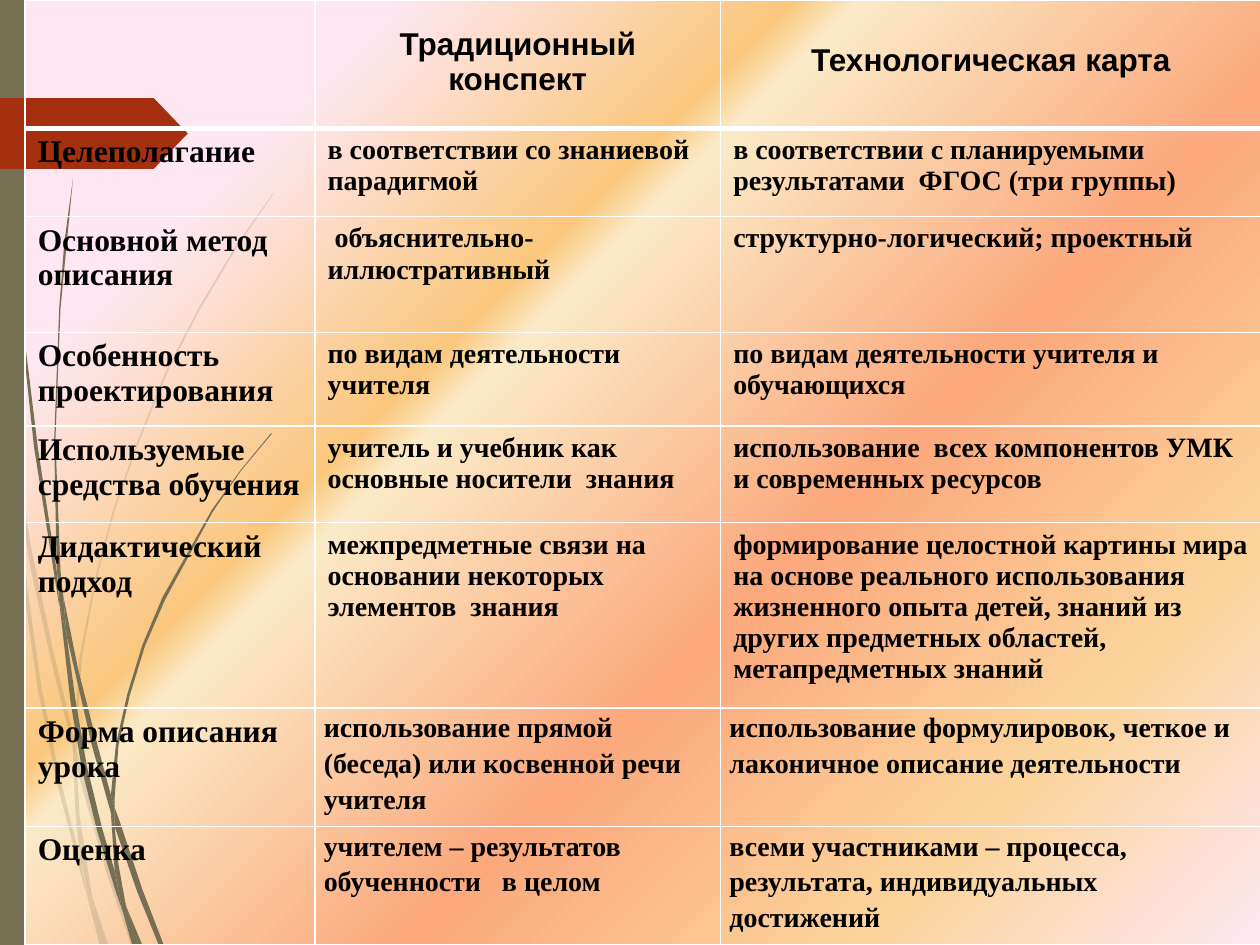
"""Build a slide that compares a traditional lesson plan with a technological map."""
from dataclasses import dataclass

from lxml import etree
from pptx import Presentation
from pptx.dml.color import RGBColor
from pptx.enum.shapes import MSO_SHAPE
from pptx.enum.text import MSO_ANCHOR, PP_ALIGN
from pptx.oxml.ns import qn
from pptx.util import Emu, Inches, Pt

RECTANGLE, ARROW_TAG = MSO_SHAPE.RECTANGLE, MSO_SHAPE.PENTAGON
LEFT, CENTER, TOP = PP_ALIGN.LEFT, PP_ALIGN.CENTER, MSO_ANCHOR.TOP
COLORS = {"stem": "766F54", "tag": "A53010", "text": "000000", "border": "FFFFFF",
          "pink": "FEE7F2", "amber": "FAC77D", "cream": "FBEAC7",
          "coral": "FBA97D", "sand": "FBD49C"}
BACKGROUND = [(18, "pink"), (36, "amber"), (39, "cream"),
              (61, "coral"), (82, "sand"), (100, "pink")]
GRID_COLUMNS, GRID_ROWS = 100, 75
SLIDE_WIDTH, SLIDE_HEIGHT = Inches(10), Inches(7.5)
TABLE_COLUMNS = [23, 32.2, 42.9]
TABLE_ROWS = [10.2, 7, 9.2, 7.4, 7.7, 14.7, 9.4, 9.4]
HEADERS = [("", 0.5), ("Традиционный конспект", 2.1), ("Технологическая карта", 3.4)]


@dataclass(frozen=True)
class Box:
    left: float
    top: float
    width: float
    height: float


@dataclass(frozen=True)
class Stem:
    points: list[tuple[float, float]]
    opacity: int = 100


@dataclass(frozen=True)
class Aspect:
    name: str
    traditional: str
    technological: str
    loose: bool = False


ASPECTS = [
    Aspect("Целеполагание", "в соответствии со знаниевой парадигмой",
           "в соответствии с планируемыми результатами  ФГОС (три группы)"),
    Aspect("Основной метод описания", " объяснительно- иллюстративный",
           "структурно-логический; проектный"),
    Aspect("Особенность проектирования", "по видам деятельности учителя",
           "по видам деятельности учителя и обучающихся"),
    Aspect("Используемые средства обучения",
           "учитель и учебник как основные носители  знания",
           "использование  всех компонентов УМК и современных ресурсов"),
    Aspect("Дидактический подход",
           "межпредметные связи на основании некоторых элементов  знания",
           "формирование целостной картины мира на основе реального использования "
           "жизненного опыта детей, знаний из других предметных областей, "
           "метапредметных знаний"),
    Aspect("Форма описания урока",
           "использование прямой (беседа) или косвенной речи учителя",
           "использование формулировок, четкое и лаконичное описание деятельности", True),
    Aspect("Оценка", "учителем – результатов обученности   в целом",
           "всеми участниками – процесса, результата, индивидуальных достижений", True),
]

PALE_OUTLINES = [
    [(0.8, 35), (0.6, 32.2), (0, 28.2), (0, 29.9), (0.7, 34.4)],
    [(4, 52.2), (5.9, 59.9), (5.9, 58.6), (4.3, 52), (2.5, 43.6), (1, 34.5),
     (1.2, 37.6), (2.4, 45)],
    [(6.4, 60.7), (6.1, 59.6), (6.1, 61), (8.5, 69.4), (10.4, 75), (10.8, 75), (8.8, 69.2)],
    [(8.3, 75), (8.6, 75), (7.3, 71.1)],
    [(6.4, 68.3), (4.8, 61.9), (3.3, 54.6), (2.2, 46.9), (1.2, 37.6), (0.8, 35),
     (1.9, 47), (3, 54.7), (4.5, 62.1), (6.4, 69.3), (7, 71.4)],
    [(5.8, 59.9), (6, 64.6), (6.4, 68.3), (7.3, 71.1), (6.3, 64.6), (6.1, 60.8)],
    [(6.1, 58.4), (6.5, 52.2), (7.6, 46.2), (9.1, 40.5), (11.1, 34.9), (13.3, 29.5),
     (15.9, 24.5), (18.7, 19.8), (21.7, 15.4), (21.7, 15.3), (18.6, 19.7), (15.8, 24.4),
     (13.2, 29.4), (11, 34.8), (9, 40.4), (7.5, 46.1), (6.3, 52.2), (5.9, 58.4), (6.1, 59.6)],
    [(7, 71.4), (7.9, 75), (8.2, 75)],
    [(6.1, 61), (6.1, 59.6), (5.9, 58.6), (5.8, 59.9)],
    [(6.7, 69.2), (6.5, 68.3), (7, 71.4), (8.2, 75), (8.3, 75), (7.3, 71.1)],
]
DARK_OUTLINES = [
    [(0.5, 11), (1.4, 23.3), (2.7, 35.5), (4.7, 48.1), (4.5, 45.3), (3, 35.5),
     (1.5, 23.2), (0.6, 10.9), (0.3, 0), (0.2, 0)],
    [(7.3, 59.2), (8.8, 64.5), (8.8, 63.1), (7.7, 59), (6.2, 53.1), (5, 47.2), (5.3, 50.5)],
    [(9.4, 64.9), (9.1, 64.1), (9.1, 65.6), (10.9, 70.8), (12.6, 75), (13, 75), (11.3, 70.6)],
    [(9.1, 69.1), (8.1, 65.7), (6.9, 60.8), (6, 55.6), (5.3, 50.5), (4.7, 47.7),
     (5.6, 55.7), (6.5, 61), (7.7, 65.9), (9.2, 70.8), (9.7, 72.2)],
    [(5, 47.2), (4.8, 45.3), (4.4, 34.9), (4.8, 24.5), (5.8, 14.1), (5.1, 19.3),
     (4.7, 24.5), (4.3, 34.9), (4.5, 44.9), (4.9, 47.2)],
    [(11, 75), (11.3, 75), (10, 71.9)],
    [(4.7, 47.7), (5.3, 50.5), (5, 47.2), (4.5, 44.9)],
    [(9.1, 63.3), (9.4, 59.2), (10.3, 55.2), (11.5, 51.3), (13.1, 47.6), (16.9, 40.6),
     (19.1, 37.4), (21.6, 34.4), (21.5, 34.4), (19.1, 37.3), (16.8, 40.5), (12.9, 47.4),
     (11.3, 51.2), (10.1, 55.1), (9.2, 59.1), (8.8, 63.1), (9.1, 64.1)],
    [(9.7, 72.2), (10.5, 75), (10.8, 75)],
    [(8.8, 64.5), (9.1, 69.1), (10, 71.9), (9.4, 68.6), (9.1, 65.6)],
    [(8.8, 64.5), (9.1, 65.6), (9.1, 64.1), (8.8, 63.1)],
    [(9.6, 70.6), (9.1, 69.1), (9.7, 72.2), (10.8, 75), (11, 75), (10, 71.9)],
]
STEMS = [Stem(points, 20) for points in PALE_OUTLINES] + [Stem(points) for points in DARK_OUTLINES]


def across(columns: float) -> Emu:
    return Emu(round(SLIDE_WIDTH * columns / GRID_COLUMNS))


def down(rows: float) -> Emu:
    return Emu(round(SLIDE_HEIGHT * rows / GRID_ROWS))


def add_color(parent, color: str):
    return etree.SubElement(parent, qn("a:srgbClr"), val=COLORS[color])


def paint_background(slide) -> None:
    fill = slide.background.fill
    fill.gradient()
    fill.gradient_angle = 315
    stops = slide.element.find(".//" + qn("a:gsLst"))
    for stop in list(stops):
        stops.remove(stop)
    for position, color in BACKGROUND:
        add_color(etree.SubElement(stops, qn("a:gs"), pos=str(position * 1000)), color)


def paint_shape(shape, color: str, opacity: int = 100) -> None:
    shape.shadow.inherit = False
    shape.fill.solid()
    shape.fill.fore_color.rgb = RGBColor.from_string(COLORS[color])
    shape.line.fill.background()
    if opacity < 100:
        value = shape.fill._xPr.find(".//" + qn("a:srgbClr"))
        etree.SubElement(value, qn("a:alpha"), val=str(opacity * 1000))


def draw_stem(slide, stem: Stem) -> None:
    points = [(across(x), down(y)) for x, y in stem.points]
    builder = slide.shapes.build_freeform(*points[0])
    builder.add_line_segments(points[1:], close=True)
    paint_shape(builder.convert_to_shape(), "stem", stem.opacity)


def draw_block(slide, kind, box: Box, color: str):
    shape = slide.shapes.add_shape(kind, across(box.left), down(box.top),
                                   across(box.width), down(box.height))
    paint_shape(shape, color)
    return shape


def write_text(cell, text: str, *, size: float, font: str = "Times New Roman",
               align=LEFT, spacing: float = 1.0) -> None:
    paragraph = cell.text_frame.paragraphs[0]
    paragraph.alignment, paragraph.line_spacing = align, spacing
    paragraph.font.size = Pt(size)
    if text:
        run = paragraph.add_run()
        run.text = text
        run.font.name, run.font.size, run.font.bold = font, Pt(size), True
        run.font.color.rgb = RGBColor.from_string(COLORS["text"])


def format_cell(cell, row: int) -> None:
    properties = cell._tc.get_or_add_tcPr()
    widths = {"lnL": 1, "lnR": 1, "lnT": 3 if row == 1 else 1, "lnB": 3 if row == 0 else 1}
    for side, width in widths.items():
        line = etree.SubElement(properties, qn("a:" + side), w=str(Pt(width)))
        add_color(etree.SubElement(line, qn("a:solidFill")), "border")
    cell.fill.background()
    cell.vertical_anchor = TOP


def draw_table(slide, box: Box) -> None:
    table = slide.shapes.add_table(len(TABLE_ROWS), len(TABLE_COLUMNS), across(box.left),
                                   down(box.top), across(box.width), down(box.height)).table
    table.horz_banding = False
    for column, width in zip(table.columns, TABLE_COLUMNS):
        column.width = across(width)
    for index, (row, height) in enumerate(zip(table.rows, TABLE_ROWS)):
        row.height = down(height)
        for cell in row.cells:
            format_cell(cell, index)
    for index, (text, margin) in enumerate(HEADERS):
        cell = table.cell(0, index)
        cell.margin_top = down(margin)
        write_text(cell, text, size=18, font="Arial", align=CENTER)
    for row, aspect in enumerate(ASPECTS, start=1):
        write_text(table.cell(row, 0), aspect.name, size=18)
        for column, text in enumerate((aspect.traditional, aspect.technological), start=1):
            cell = table.cell(row, column)
            if aspect.loose:
                cell.margin_left = cell.margin_right = across(0.7)
                cell.margin_top = cell.margin_bottom = 0
            write_text(cell, text, size=16, spacing=1.15 if aspect.loose else 1.0)


def main() -> None:
    presentation = Presentation()
    presentation.slide_width, presentation.slide_height = SLIDE_WIDTH, SLIDE_HEIGHT
    slide = presentation.slides.add_slide(presentation.slide_layouts[6])
    paint_background(slide)
    for stem in STEMS:
        draw_stem(slide, stem)
    draw_block(slide, RECTANGLE, Box(0, 0, 2, GRID_ROWS), "stem")
    tag = draw_block(slide, ARROW_TAG, Box(0, 7.8, 14.9, 5.6), "tag")
    tag.adjustments[0] = 0.48
    draw_table(slide, Box(2, 0, 98, GRID_ROWS))
    presentation.save("out.pptx")


if __name__ == "__main__":
    main()
